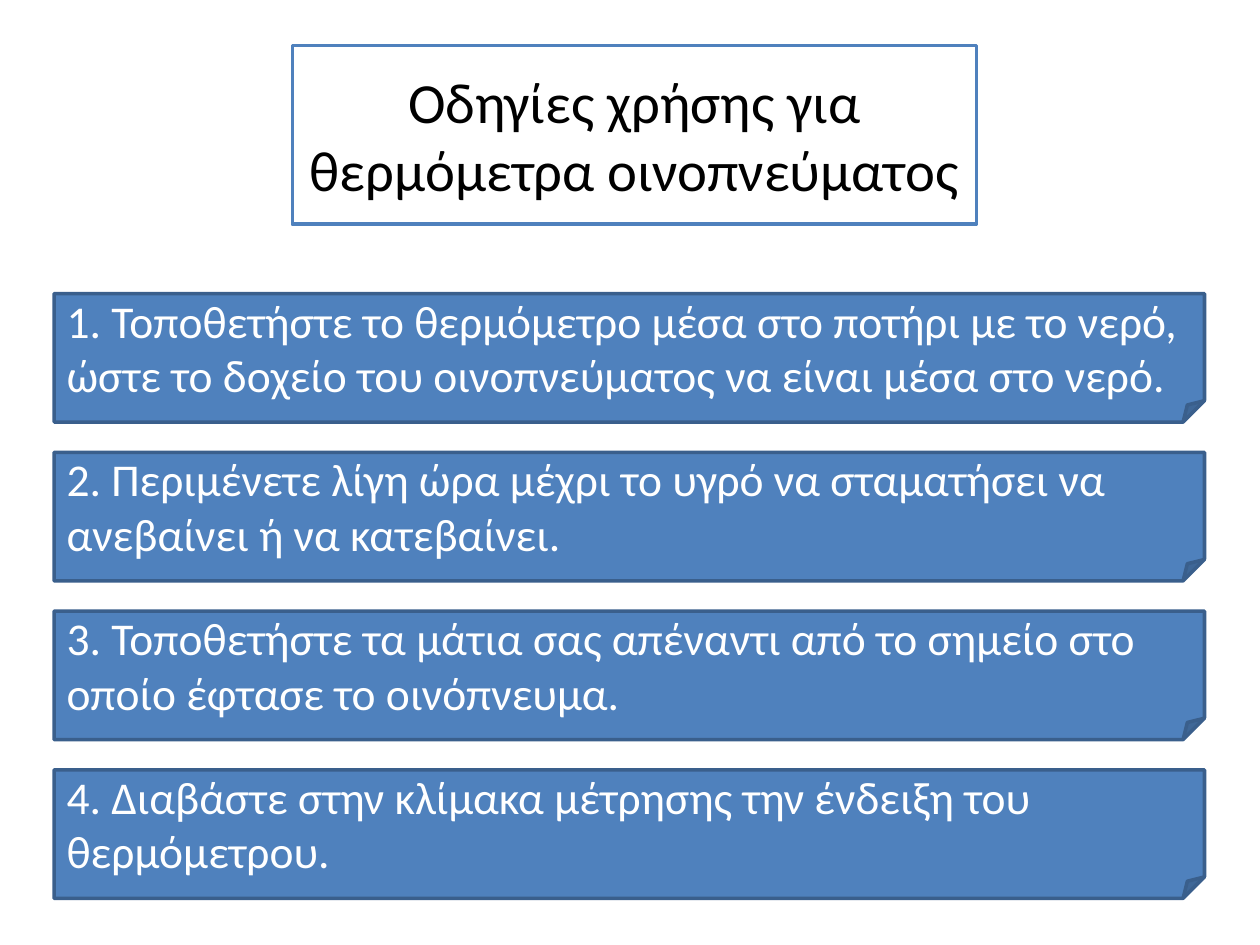
from pptx import Presentation
from pptx import util as u
from pptx.dml.color import RGBColor
from pptx.enum import shapes, text

COLOURS = {"white": "FFFFFF", "black": "000000", "blue": "4F81BD", "edge": "3A5F8C"}

TITLE = "Οδηγίες χρήσης για θερμόμετρα οινοπνεύματος"
STEPS = [
    "1. Τοποθετήστε το θερμόμετρο μέσα στο ποτήρι με το νερό, "
    "ώστε το δοχείο του οινοπνεύματος να είναι μέσα στο νερό.",
    "2. Περιμένετε λίγη ώρα μέχρι το υγρό να σταματήσει να ανεβαίνει ή να κατεβαίνει.",
    "3. Τοποθετήστε τα μάτια σας απέναντι από το σημείο στο οποίο έφτασε το οινόπνευμα.",
    "4. Διαβάστε στην κλίμακα μέτρησης την ένδειξη του θερμόμετρου.",
]

# Step grid, in inches
STEP_LEFT, STEP_TOP, STEP_WIDTH, STEP_HEIGHT = 0.43, 2.33, 9.13, 1.02
STEP_PITCH = 1.26


def colour(name):
    return RGBColor.from_string(COLOURS[name])


def set_all(target, values):
    for name, value in values.items():
        setattr(target, name, value)


def add_box(page, kind, place, words, fill, line, ink, size, align):
    """Add a filled, outlined shape holding one paragraph."""
    box = page.shapes.add_shape(kind, *(u.Inches(length) for length in place))
    box.shadow.inherit = False
    box.fill.solid()
    box.fill.fore_color.rgb = colour(fill)
    box.line.color.rgb = colour(line)
    box.line.width = u.Pt(2)
    set_all(box.text_frame, {"word_wrap": True,
                             "vertical_anchor": text.MSO_ANCHOR.MIDDLE})
    para = box.text_frame.paragraphs[0]
    para.alignment = align
    span = para.add_run()
    span.text = words
    set_all(span.font, {"name": "Calibri", "size": u.Pt(size)})
    span.font.color.rgb = colour(ink)


def add_title(page):
    add_box(page, shapes.MSO_SHAPE.RECTANGLE, (2.32, 0.36, 5.43, 1.42), TITLE,
            "white", "blue", "black", 32.4, text.PP_ALIGN.CENTER)


def add_step(page, row, words):
    place = (STEP_LEFT, STEP_TOP + row * STEP_PITCH, STEP_WIDTH, STEP_HEIGHT)
    add_box(page, shapes.MSO_SHAPE.FOLDED_CORNER, place, words,
            "blue", "edge", "white", 26, text.PP_ALIGN.LEFT)


def main():
    deck = Presentation()
    set_all(deck, {"slide_width": u.Inches(10), "slide_height": u.Inches(7.5)})
    page = deck.slides.add_slide(deck.slide_layouts[6])

    # Heading, then one folded note per instruction
    add_title(page)
    for row, words in enumerate(STEPS):
        add_step(page, row, words)

    deck.save("out.pptx")


if __name__ == "__main__":
    main()
